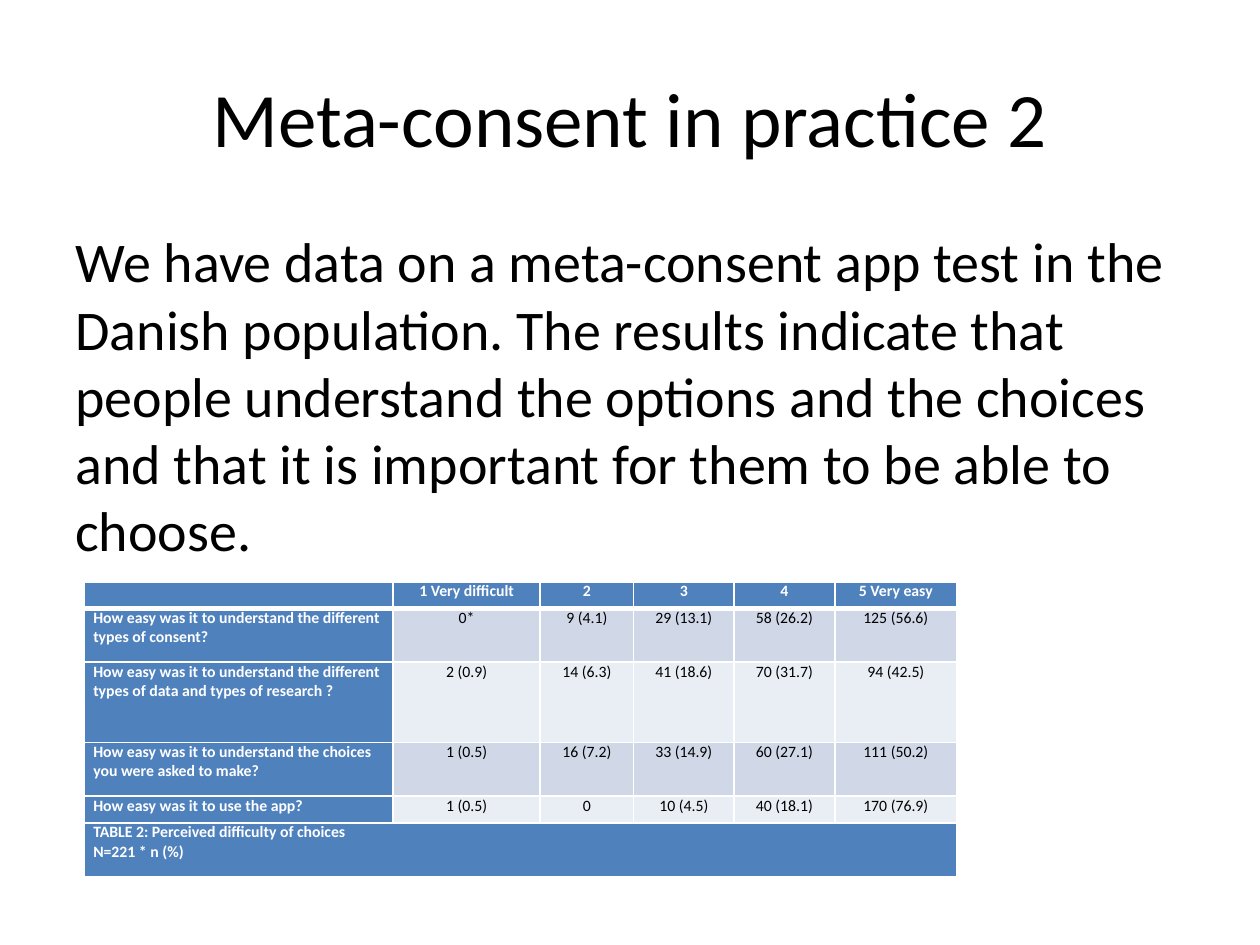
from dataclasses import dataclass

from lxml import etree
from pptx import Presentation
from pptx import util as u
from pptx.dml.color import RGBColor
from pptx.enum import text
from pptx.oxml.ns import qn


@dataclass(frozen=True)
class Theme:
    font: str = "Calibri"
    ink: str = "000000"
    white: str = "FFFFFF"
    accent: str = "4F81BD"
    bands: tuple = ("D0D8E8", "E9EDF4")
    title_size: float = 44
    body_size: float = 32
    table_size: float = 9
    thin: float = 1
    thick: float = 3


LEFT, CENTER = text.PP_ALIGN.LEFT, text.PP_ALIGN.CENTER


class SlideBuilder:
    def __init__(self, slide, theme):
        self.slide = slide
        self.theme = theme

    def style(self, paragraph, size, color, align=LEFT, bold=False):
        paragraph.alignment = align
        font = paragraph.font
        font.name, font.size, font.bold = self.theme.font, u.Pt(size), bold
        font.color.rgb = RGBColor.from_string(color)

    def text_box(self, box, content, size, align=LEFT,
                 anchor=text.MSO_ANCHOR.TOP, space_before=0):
        shape = self.slide.shapes.add_textbox(*map(u.Cm, box))
        frame = shape.text_frame
        frame.word_wrap = True
        frame.vertical_anchor = anchor
        frame.text = content
        paragraph = frame.paragraphs[0]
        paragraph.space_before = u.Pt(space_before)
        self.style(paragraph, size, self.theme.ink, align)

    def borders(self, cell, top, bottom):
        properties = cell._tc.get_or_add_tcPr()
        widths = {"L": self.theme.thin, "R": self.theme.thin, "T": top, "B": bottom}
        for side, width in widths.items():
            line = etree.SubElement(properties, qn(f"a:ln{side}"), w=str(u.Pt(width)))
            fill = etree.SubElement(line, qn("a:solidFill"))
            etree.SubElement(fill, qn("a:srgbClr"), val=self.theme.white)

    def cell(self, cell, content, fill, color, align, bold):
        cell.margin_left = cell.margin_right = u.Cm(0.18)
        cell.margin_top = cell.margin_bottom = 0
        cell.fill.solid()
        cell.fill.fore_color.rgb = RGBColor.from_string(fill)
        cell.text = content
        for paragraph in cell.text_frame.paragraphs:
            self.style(paragraph, self.theme.table_size, color, align, bold)

    def table(self, left, top, widths, heights, rows):
        theme = self.theme
        box = (left, top, sum(widths), sum(heights))
        table = self.slide.shapes.add_table(
            len(rows), len(widths), *map(u.Cm, box)).table
        for column, width in zip(table.columns, widths):
            column.width = u.Cm(width)
        for row, height in zip(table.rows, heights):
            row.height = u.Cm(height)

        last = len(rows) - 1
        for r, values in enumerate(rows):
            for c, value in enumerate(values):
                cell = table.cell(r, c)
                self.borders(cell,
                             theme.thick if r == 1 else theme.thin,
                             theme.thick if r == 0 else theme.thin)
                heading = r in (0, last) or c == 0
                self.cell(cell, value,
                          theme.accent if heading else theme.bands[(r - 1) % 2],
                          theme.white if heading else theme.ink,
                          CENTER if c else LEFT, heading)
        # The caption row spans the whole table
        table.cell(last, 0).merge(table.cell(last, len(widths) - 1))


def main():
    presentation = Presentation()
    presentation.slide_width, presentation.slide_height = u.Cm(25.4), u.Cm(19.05)
    theme = Theme()
    builder = SlideBuilder(
        presentation.slides.add_slide(presentation.slide_layouts[6]), theme)

    # Title and body
    builder.text_box((1.27, 0.76, 22.86, 3.18), "Meta-consent in practice 2",
                     theme.title_size, CENTER, text.MSO_ANCHOR.MIDDLE)
    builder.text_box(
        (1.27, 4.45, 22.86, 12.57),
        "We have data on a meta-consent app test in the Danish population. "
        "The results indicate that people understand the options and the choices "
        "and that it is important for them to be able to choose.",
        theme.body_size, space_before=0.2 * theme.body_size)

    # Survey results
    rows = [
        ("", "1 Very difficult", "2", "3", "4", "5 Very easy"),
        ("How easy was it to understand the different types of consent?",
         "0*", "9 (4.1)", "29 (13.1)", "58 (26.2)", "125 (56.6)"),
        ("How easy was it to understand the different types of data and types of research ?",
         "2 (0.9)", "14 (6.3)", "41 (18.6)", "70 (31.7)", "94 (42.5)"),
        ("How easy was it to understand the choices you were asked to make?",
         "1 (0.5)", "16 (7.2)", "33 (14.9)", "60 (27.1)", "111 (50.2)"),
        ("How easy was it to use the app?",
         "1 (0.5)", "0", "10 (4.5)", "40 (18.1)", "170 (76.9)"),
        ("TABLE 2: Perceived difficulty of choices\nN=221 * n (%)",
         "", "", "", "", ""),
    ]
    line_height = 0.54
    heights = [lines * line_height for lines in (1, 2, 3, 2, 1, 2)]
    builder.table(1.7, 11.73, (6.22, 2.97, 1.88, 2.03, 2.03, 2.46), heights, rows)

    presentation.save("out.pptx")


if __name__ == "__main__":
    main()
